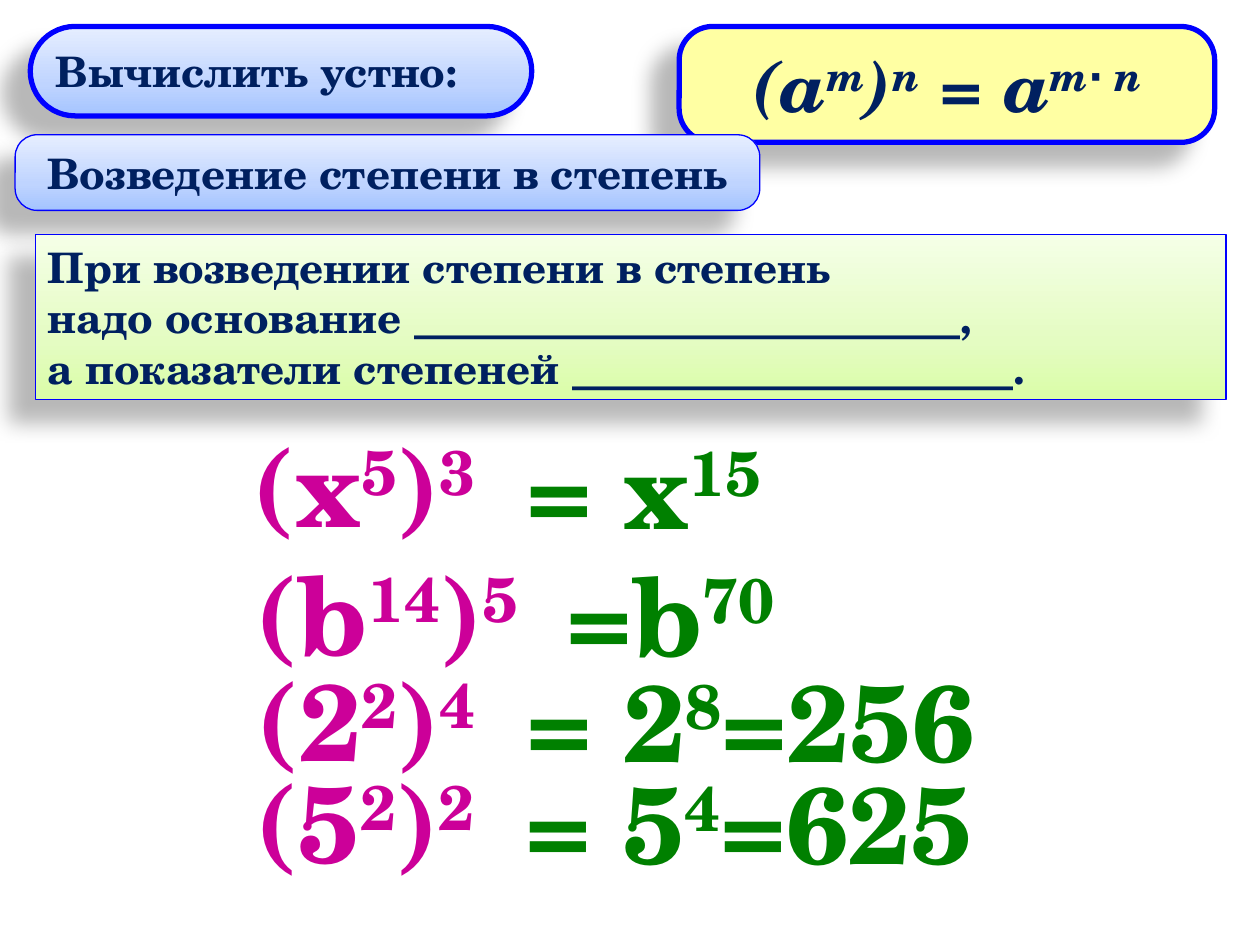
import copy
import pptx
import pptx.dml.color
import pptx.enum.shapes
import pptx.enum.text
import pptx.oxml
import pptx.oxml.ns
import pptx.util

Inches = pptx.util.Inches
Pt = pptx.util.Pt
SHAPES = pptx.enum.shapes.MSO_SHAPE
ALIGN = pptx.enum.text.PP_ALIGN
ANCHOR = pptx.enum.text.MSO_ANCHOR

COLORS = {"navy": "002060", "outline": "0000FF", "yellow": "FFFFA3",
          "task": "CC0099", "answer": "008000"}
BLUE = [(0, "A4C4FF"), (0.35, "BFD4FF"), (1, "E6EEFF")]
GREEN = [(0, "DAFDA7"), (0.35, "E4FCC2"), (1, "F5FFE7")]
SHADOW = """<a:effectLst xmlns:a="http://schemas.openxmlformats.org/drawingml/2006/main">
<a:outerShdw blurRad="%d" dist="%d" dir="8460000" algn="tr" rotWithShape="0">
<a:srgbClr val="000000"><a:alpha val="28000"/></a:srgbClr></a:outerShdw></a:effectLst>"""


def rgb(value):
    return pptx.dml.color.RGBColor.from_string(value)


class Board:
    def __init__(self, page):
        self.page = page
        self.font = {"name": "TeX Gyre Schola", "bold": True}

    def add_lines(self, box, lines, color, size, align=ALIGN.LEFT, italic=False):
        para = box.text_frame.paragraphs[0]
        para.alignment = align
        values = {**self.font, "size": Pt(size), "italic": italic}
        for number, pieces in enumerate(lines):
            if number:
                para.add_line_break()
            for index, text in enumerate(pieces):
                span = para.add_run()
                span.text = text
                for key, value in values.items():
                    setattr(span.font, key, value)
                span.font.color.rgb = rgb(COLORS[color])
                if index % 2:
                    span.font._element.set("baseline", "30000")

    def paint(self, box, fill):
        if isinstance(fill, str):
            box.fill.solid()
            box.fill.fore_color.rgb = rgb(COLORS[fill])
            return
        box.fill.gradient()
        box.fill.gradient_angle = 90
        stops = box._element.spPr.find(".//" + pptx.oxml.ns.qn("a:gsLst"))
        stops.append(copy.deepcopy(stops[-1]))
        for stop, (position, color) in zip(box.fill.gradient_stops, fill):
            stop.position = position
            stop.color.rgb = rgb(color)

    def panel(self, kind, place, fill, line, lines, corner=None, size=24, **style):
        box = self.page.shapes.add_shape(kind, *map(Inches, place))
        if corner is not None:
            box.adjustments[0] = corner
        self.paint(box, fill)
        box.line.color.rgb = rgb(COLORS["outline"])
        box.line.width = Pt(line)
        box.shadow.inherit = False
        properties = box._element.spPr
        properties.remove(properties.find(pptx.oxml.ns.qn("a:effectLst")))
        properties.append(pptx.oxml.parse_xml(SHADOW % (Pt(11.8), Pt(19.7))))
        box.text_frame.word_wrap = True
        box.text_frame.vertical_anchor = ANCHOR.MIDDLE
        self.add_lines(box, lines, "navy", size, **style)

    def power(self, left, top, width, pieces, color):
        box = self.page.shapes.add_textbox(*map(Inches, (left, top, width, 1.14)))
        box.text_frame.word_wrap = True
        self.add_lines(box, [pieces], color, 62)


def main():
    deck = pptx.Presentation()
    deck.slide_width, deck.slide_height = Inches(10), Inches(7.5)
    board = Board(deck.slides.add_slide(deck.slide_layouts[6]))

    rounded = SHAPES.ROUNDED_RECTANGLE
    board.panel(rounded, (5.39, 0.21, 4.25, 0.92), "yellow", 3,
                [["(а", "m", ")", "n", " = а", "m⋅ n"]],
                corner=0.29, size=40, align=ALIGN.CENTER, italic=True)
    board.panel(rounded, (0.24, 0.21, 3.98, 0.71), BLUE, 3,
                [["Вычислить устно:"]], corner=0.5)
    board.panel(rounded, (0.12, 1.07, 5.91, 0.6), BLUE, 0.75,
                [["Возведение степени в степень"]], corner=0.29, align=ALIGN.CENTER)
    board.panel(SHAPES.RECTANGLE, (0.28, 1.86, 9.45, 1.31), GREEN, 0.75,
                [["При возведении степени в степень"],
                 ["надо основание __________________________,"],
                 ["а показатели степеней _____________________."]])

    examples = [
        (3.28, (1.91, 2.2, ["(х", "5", ")", "3"]), (4.08, 2.18, ["= х", "15"])),
        (4.29, (1.93, 2.55, ["(b", "14", ")", "5"]), (4.4, 2.1, ["=b", "70"])),
        (5.13, (1.94, 2.27, ["(2", "2", ")", "4"]), (4.08, 4.21, ["= 2", "8", "=256"])),
        (5.94, (1.93, 2.23, ["(5", "2", ")", "2"]), (4.07, 4.17, ["= 5", "4", "=625"])),
    ]
    for top, task, answer in examples:
        for color, offset, (left, width, pieces) in (("task", 0, task), ("answer", 0.01, answer)):
            board.power(left, top + offset, width, pieces, color)

    deck.save("out.pptx")


if __name__ == "__main__":
    main()
